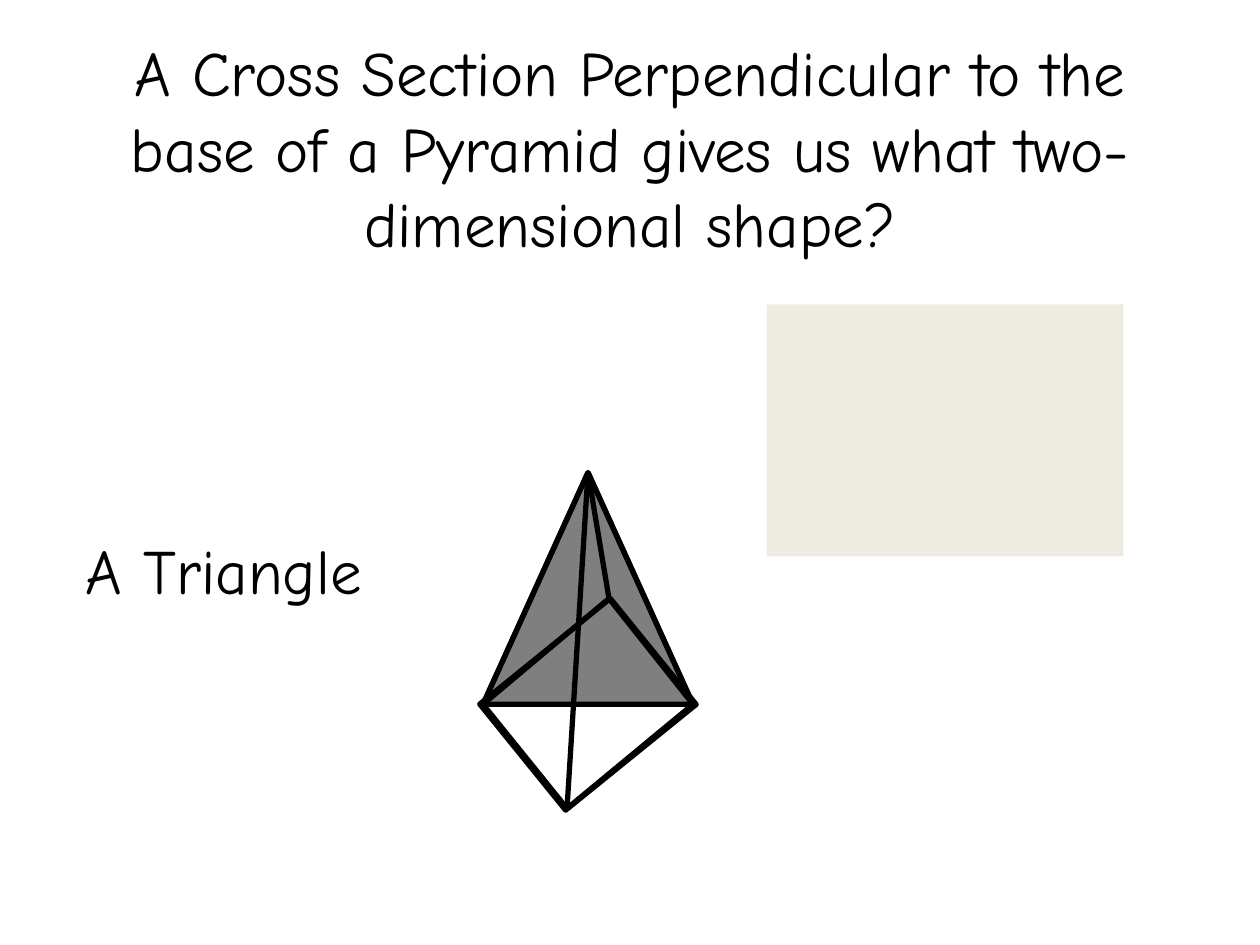
from lxml.etree import SubElement
from pptx import Presentation
from pptx.dml.color import RGBColor
from pptx.enum.shapes import MSO_CONNECTOR, MSO_SHAPE
from pptx.enum.text import MSO_ANCHOR, PP_ALIGN
from pptx.oxml.ns import qn
from pptx.util import Pt

BLACK = RGBColor(0, 0, 0)
CREAM = RGBColor(0xEE, 0xEC, 0xE1)
FONT = "Comic Neue"


def add_text(s, text, box, size=36, color=BLACK, align=PP_ALIGN.LEFT,
             anchor=MSO_ANCHOR.TOP, wrap=True):
    """Add a text box in the given box, in points."""
    tf = s.shapes.add_textbox(*map(Pt, box)).text_frame
    tf.word_wrap = wrap
    tf.vertical_anchor = anchor
    p = tf.paragraphs[0]
    p.alignment = align
    r = p.add_run()
    r.text = text
    r.font.name, r.font.size, r.font.color.rgb = FONT, Pt(size), color


def add_shape(s, kind, box, fill=None, alpha=None, line=None, rotation=0):
    """Add a preset shape with optional fill, opacity in percent and outline."""
    sp = s.shapes.add_shape(kind, *map(Pt, box))
    sp.shadow.inherit = False
    sp.rotation = rotation
    if fill is None:
        sp.fill.background()
    else:
        sp.fill.solid()
        sp.fill.fore_color.rgb = fill
    if alpha is not None:
        clr = sp._element.spPr.find(qn("a:solidFill"))[0]
        SubElement(clr, qn("a:alpha"), val=str(alpha * 1000))
    if line is None:
        sp.line.fill.background()
    else:
        sp.line.color.rgb, sp.line.width = line, Pt(3)


def add_edge(s, start, end):
    """Draw one straight black edge between two points."""
    c = s.shapes.add_connector(MSO_CONNECTOR.STRAIGHT, *map(Pt, start + end))
    c.line.color.rgb, c.line.width = BLACK, Pt(3)
    SubElement(c._element.spPr, qn("a:effectLst"))


def add_pyramid(s, x, y, w, h):
    """Draw the pyramid with its shaded vertical section."""
    section_h = 0.69 * h
    base_w, base_h = 0.8 * w, 0.65 * w
    base = (x + (w - base_w) / 2, y + section_h - base_h / 2, base_w, base_h)
    apex = (x + w / 2, y)
    left, right = (x, y + section_h), (x + w, y + section_h)
    back, front = (x + 0.6 * w, y + 0.375 * h), (x + 0.4 * w, y + h)
    add_shape(s, MSO_SHAPE.ISOSCELES_TRIANGLE, (x, y, w, section_h),
              fill=BLACK, alpha=50, line=BLACK)
    add_shape(s, MSO_SHAPE.RECTANGLE, base, line=BLACK, rotation=321)
    edges = [(back, apex), (right, back), (back, left), (left, right),
             (front, apex), (front, right), (left, front), (right, apex),
             (apex, left)]
    for start, end in edges:
        add_edge(s, start, end)


def main():
    """Build and save the slide."""
    prs = Presentation()
    prs.slide_width, prs.slide_height = Pt(720), Pt(540)
    s = prs.slides.add_slide(prs.slide_layouts[6])
    add_text(s, "A Cross Section Perpendicular to the base of a Pyramid "
             "gives us what two- dimensional shape?", (36, 12, 648, 144),
             align=PP_ALIGN.CENTER, anchor=MSO_ANCHOR.MIDDLE)
    add_pyramid(s, 276, 270, 120, 192)
    add_shape(s, MSO_SHAPE.RECTANGLE, (438, 174, 204, 144), fill=CREAM)
    add_text(s, "A Triangle", (42, 300, 189, 50.4), wrap=False)
    prs.save("out.pptx")


if __name__ == "__main__":
    main()
